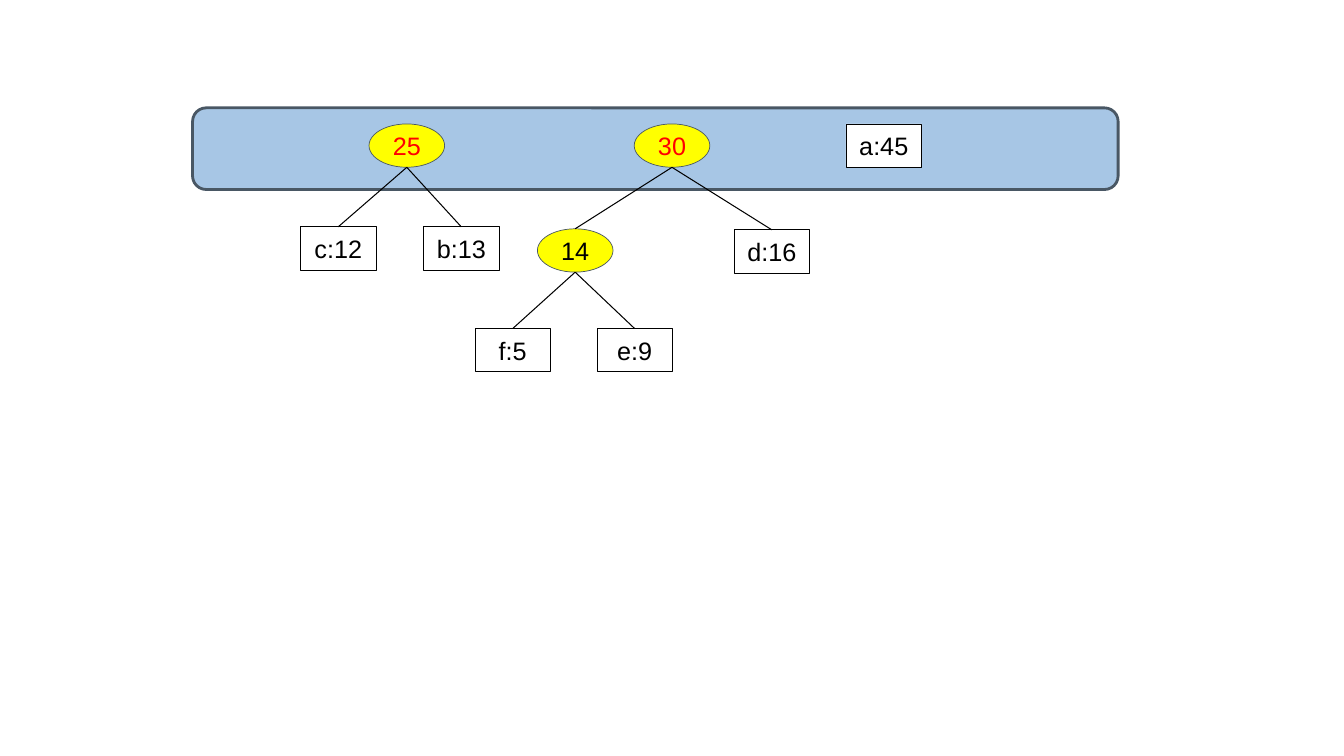
"""Draw one step of building a Huffman tree, with the queue as a band."""
from lxml.etree import SubElement
from pptx import Presentation
from pptx.dml.color import RGBColor
from pptx.enum.shapes import MSO_CONNECTOR, MSO_SHAPE
from pptx.enum.text import MSO_ANCHOR, PP_ALIGN
from pptx.oxml.ns import qn
from pptx.util import Inches, Pt

HUES = {"band": "A7C6E5", "edge": "495764", "leaf": "FFFFFF",
        "node": "FFFF00", "ink": "000000", "new": "FF0000"}
COLS, ROWS = 1333, 750
BAND = (191, 107, 918, 81)
WIDE, HIGH = 75, 43
TOPS = {"queue": 123, "left": 225, "mid": 227, "right": 228, "low": 326}
LEAVES = [
    ("f:5", 471, "low", "14"),
    ("e:9", 592, "low", "14"),
    ("c:12", 298, "left", "25"),
    ("b:13", 420, "left", "25"),
    ("d:16", 728, "right", "30"),
    ("a:45", 839, "queue", None),
]
NODES = [
    ("14", 533, "mid", "30", "ink"),
    ("25", 366, "queue", None, "new"),
    ("30", 629, "queue", None, "new"),
]

deck = Presentation()
deck.slide_width, deck.slide_height = Inches(13.33), Inches(7.5)
slide = deck.slides.add_slide(deck.slide_layouts[6])
shapes = slide.shapes


def hue(name):
    return RGBColor.from_string(HUES[name])


def across(col):
    return round(deck.slide_width * col / COLS)


def down(row):
    return round(deck.slide_height * row / ROWS)


def add_form(kind, box, fill, edge, width):
    left, top, wide, high = box
    form = shapes.add_shape(kind, across(left), down(top), across(wide), down(high))
    form.shadow.inherit = False
    form.fill.solid()
    form.fill.fore_color.rgb = hue(fill)
    form.line.color.rgb = hue(edge)
    form.line.width = Pt(width)
    return form


def add_item(kind, text, left, row, fill, edge, ink):
    form = add_form(kind, (left, TOPS[row], WIDE, HIGH), fill, edge, 0.5)
    frame = form.text_frame
    frame.text = text
    frame.word_wrap = False
    frame.vertical_anchor = MSO_ANCHOR.MIDDLE
    para = frame.paragraphs[0]
    para.alignment = PP_ALIGN.CENTER
    font = para.runs[0].font
    font.name, font.size = "Arial", Pt(18)
    font.color.rgb = hue(ink)


def add_link(child, owner):
    (left, row), (over, above) = spots[child], spots[owner]
    line = shapes.add_connector(
        MSO_CONNECTOR.STRAIGHT,
        across(left + WIDE / 2), down(TOPS[row]),
        across(over + WIDE / 2), down(TOPS[above] + HIGH))
    line.line.color.rgb = hue("ink")
    line.line.width = Pt(0.75)
    SubElement(line._element.spPr, qn("a:effectLst"))


add_form(MSO_SHAPE.ROUNDED_RECTANGLE, BAND, "band", "edge", 2)
for text, left, row, owner in LEAVES:
    add_item(MSO_SHAPE.RECTANGLE, text, left, row, "leaf", "ink", "ink")
for text, left, row, owner, ink in NODES:
    add_item(MSO_SHAPE.OVAL, text, left, row, "node", "edge", ink)

items = LEAVES + [node[:4] for node in NODES]
spots = {text: (left, row) for text, left, row, owner in items}
for text, left, row, owner in items:
    if owner:
        add_link(text, owner)

deck.save("out.pptx")
